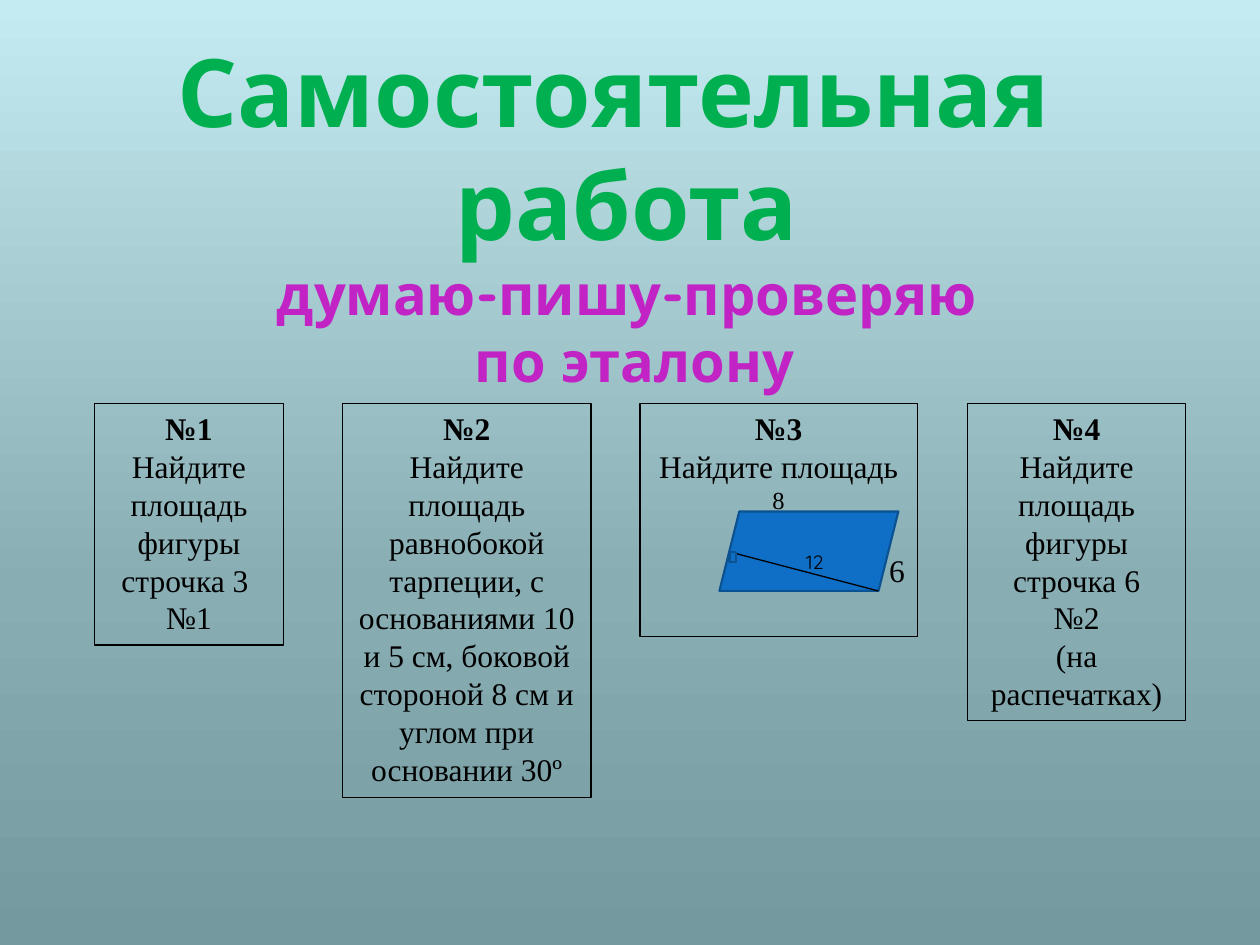
from copy import deepcopy
from dataclasses import dataclass

from pptx import Presentation
from pptx.dml.color import RGBColor
from pptx.enum.shapes import MSO_CONNECTOR, MSO_SHAPE
from pptx.enum.text import MSO_AUTO_SIZE, PP_ALIGN
from pptx.oxml.ns import qn
from pptx.util import Inches, Pt

LEFT, CENTER, RIGHT = PP_ALIGN.LEFT, PP_ALIGN.CENTER, PP_ALIGN.RIGHT
GROW = MSO_AUTO_SIZE.SHAPE_TO_FIT_TEXT
STRAIGHT = MSO_CONNECTOR.STRAIGHT
RECT, PARALLELOGRAM = MSO_SHAPE.RECTANGLE, MSO_SHAPE.PARALLELOGRAM

COLORS = {
    "sky": "C4EBF1",
    "mist": "88ADB3",
    "slate": "749AA0",
    "title": "00B050",
    "subtitle": "C123C5",
    "ink": "000000",
    "figure": "0F6FC6",
    "figure_line": "0B5292",
}
SANS, SERIF = "Quicksand", "Times New Roman"
CARD_TOP = 3.2


@dataclass
class Card:
    left: float
    width: float
    height: float
    number: str
    lines: tuple[str, ...]


CARDS = (
    Card(0.75, 1.5, 1.92, "№1", ("Найдите площадь фигуры строчка 3 ", "№1")),
    Card(2.72, 1.97, 3.13, "№2", (
        "Найдите площадь равнобокой тарпеции, с основаниями 10 и 5 см, "
        "боковой стороной 8 см и углом при основании 30º",)),
    Card(5.08, 2.2, 1.85, "№3", ("Найдите площадь",)),
    Card(7.68, 1.73, 2.52, "№4", (
        "Найдите площадь фигуры строчка 6", "№2", "(на распечатках)")),
)


def rgb(name: str) -> RGBColor:
    return RGBColor.from_string(COLORS[name])


def add_text(tf, text: str, *, size: float = 18, font: str = SERIF,
             color: str = "ink", bold: bool = False, align=CENTER,
             before: float = 0) -> None:
    p = tf.paragraphs[0] if not tf.text else tf.add_paragraph()
    p.alignment = align
    if before:
        p.space_before = Pt(before)
    r = p.add_run()
    r.text = text
    r.font.size, r.font.name, r.font.bold = Pt(size), font, bold
    r.font.color.rgb = rgb(color)


def add_box(s, left: float, top: float, width: float, height: float,
            wrap: bool = True):
    sp = s.shapes.add_textbox(Inches(left), Inches(top), Inches(width), Inches(height))
    sp.text_frame.word_wrap = wrap
    sp.text_frame.auto_size = GROW
    return sp


def add_card(s, card: Card):
    sp = add_box(s, card.left, CARD_TOP, card.width, card.height)
    sp.line.color.rgb = rgb("ink")
    sp.line.width = Pt(0.75)
    add_text(sp.text_frame, card.number, bold=True)
    for line in card.lines:
        add_text(sp.text_frame, line)
    return sp.text_frame


def add_figure(s, kind, left: float, top: float, width: float, height: float) -> None:
    sp = s.shapes.add_shape(kind, Inches(left), Inches(top), Inches(width), Inches(height))
    sp.shadow.inherit = False
    sp.fill.solid()
    sp.fill.fore_color.rgb = rgb("figure")
    sp.line.color.rgb = rgb("figure_line")
    sp.line.width = Pt(1.25)


def add_line(s, x1: float, y1: float, x2: float, y2: float) -> None:
    line = s.shapes.add_connector(STRAIGHT, Inches(x1), Inches(y1), Inches(x2), Inches(y2))
    line.line.color.rgb = rgb("ink")
    line.line.width = Pt(0.75)
    sp_pr = line._element.spPr
    sp_pr.append(sp_pr.makeelement(qn("a:effectLst"), {}))


def set_background(s) -> None:
    fill = s.background.fill
    fill.gradient()
    fill.gradient_angle = 270
    stops = s.element.find(".//" + qn("a:gsLst"))
    stops.insert(1, deepcopy(stops[0]))
    colors = (("sky", 0), ("mist", 0.62), ("slate", 1))
    for stop, (name, position) in zip(fill.gradient_stops, colors):
        stop.color.rgb = rgb(name)
        stop.position = position


def main() -> None:
    prs = Presentation()
    prs.slide_width, prs.slide_height = Inches(10), Inches(7.5)
    s = prs.slides.add_slide(prs.slide_layouts[6])
    set_background(s)

    title = add_box(s, 1.28, 0.21, 7.39, 3, wrap=False).text_frame
    for text, size, color in (
        ("Самостоятельная ", 54, "title"),
        ("работа", 54, "title"),
        ("думаю-пишу-проверяю", 32, "subtitle"),
        (" по эталону", 32, "subtitle"),
    ):
        add_text(title, text, size=size, font=SANS, color=color, bold=True)

    frames = {card.number: add_card(s, card) for card in CARDS}
    add_text(frames["№3"], "8", size=14)
    add_text(frames["№3"], "6", align=RIGHT, before=21)

    add_figure(s, PARALLELOGRAM, 5.71, 4.06, 1.42, 0.63)
    add_line(s, 6.97, 4.69, 5.79, 4.38)
    add_figure(s, RECT, 5.79, 4.38, 0.05, 0.08)
    diagonal = add_box(s, 6.3, 4.32, 0.43, 0.29).text_frame
    add_text(diagonal, "12", size=11, font=SANS, align=LEFT)

    prs.save("out.pptx")


if __name__ == "__main__":
    main()
